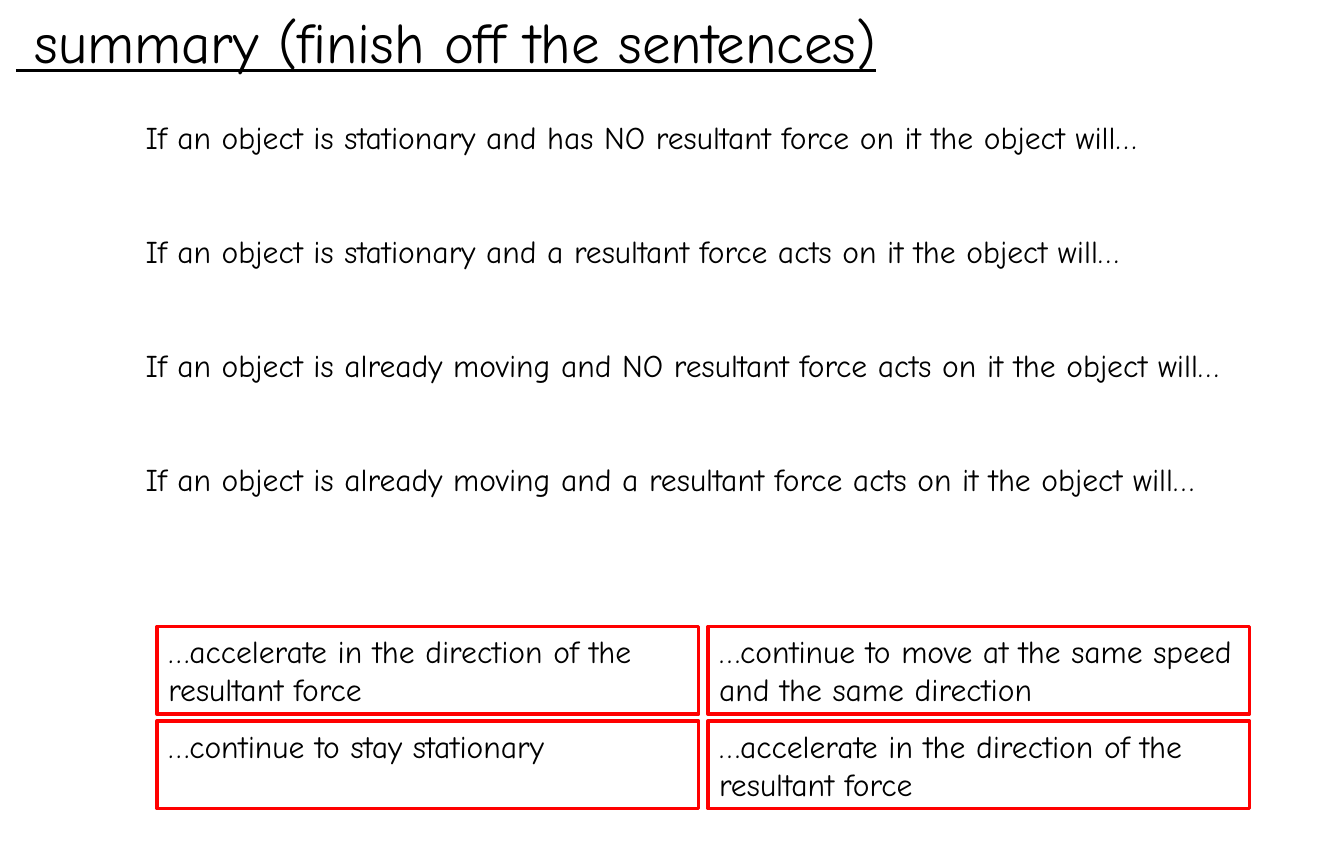
from pptx import Presentation
from pptx.dml.color import RGBColor
from pptx.enum import shapes, text
from pptx.util import Pt

BLACK = RGBColor(0, 0, 0)
RED = RGBColor(255, 0, 0)
FONT = "Comic Neue"

TITLE = " summary (finish off the sentences)"
SENTENCES = [
    "If an object is stationary and has NO resultant force on it the object will…",
    "If an object is stationary and a resultant force acts on it the object will…",
    "If an object is already moving and NO resultant force acts on it the object will…",
    "If an object is already moving and a resultant force acts on it the object will…",
]
ANSWERS = [
    "…accelerate in the direction of the resultant force",
    "…continue to move at the same speed and the same direction",
    "…continue to stay stationary",
    "…accelerate in the direction of the resultant force",
]


def add_text(paragraph, words, size, underline=None):
    paragraph.alignment = text.PP_ALIGN.LEFT
    run = paragraph.add_run()
    run.text = words
    run.font.name = FONT
    run.font.size = Pt(size)
    run.font.color.rgb = BLACK
    run.font.underline = underline


def add_title(slide, left, top, width, height):
    box = slide.shapes.add_textbox(Pt(left), Pt(top), Pt(width), Pt(height))
    box.text_frame.word_wrap = False
    add_text(box.text_frame.paragraphs[0], TITLE, 36, underline=True)


def add_sentences(slide, left, top, width, height):
    box = slide.shapes.add_textbox(Pt(left), Pt(top), Pt(width), Pt(height))
    frame = box.text_frame
    frame.word_wrap = True
    for index, sentence in enumerate(SENTENCES):
        paragraph = frame.add_paragraph() if index else frame.paragraphs[0]
        paragraph.space_before = Pt(48 if index else 0)
        add_text(paragraph, sentence, 20)


def add_answers(slide, left, top, width, height, gap_x=5.8, gap_y=4.3):
    card_width = (width - gap_x) / 2
    card_height = (height - gap_y) / 2
    for index, answer in enumerate(ANSWERS):
        row, column = divmod(index, 2)
        card = slide.shapes.add_shape(
            shapes.MSO_SHAPE.RECTANGLE,
            Pt(left + column * (card_width + gap_x)),
            Pt(top + row * (card_height + gap_y)),
            Pt(card_width),
            Pt(card_height),
        )
        card.shadow.inherit = False
        card.fill.background()
        card.line.color.rgb = RED
        card.line.width = Pt(2.25)
        frame = card.text_frame
        frame.word_wrap = True
        frame.vertical_anchor = text.MSO_ANCHOR.TOP
        add_text(frame.paragraphs[0], answer, 20)


def main():
    presentation = Presentation()
    presentation.slide_width = Pt(850.4)
    presentation.slide_height = Pt(540)
    slide = presentation.slides.add_slide(presentation.slide_layouts[6])
    add_title(slide, 2.9, 0.7, 622.8, 51.1)
    add_sentences(slide, 85, 71.3, 711.4, 322.6)
    add_answers(slide, 99.4, 396.7, 691.2, 115.2)
    presentation.save("out.pptx")


if __name__ == "__main__":
    main()
